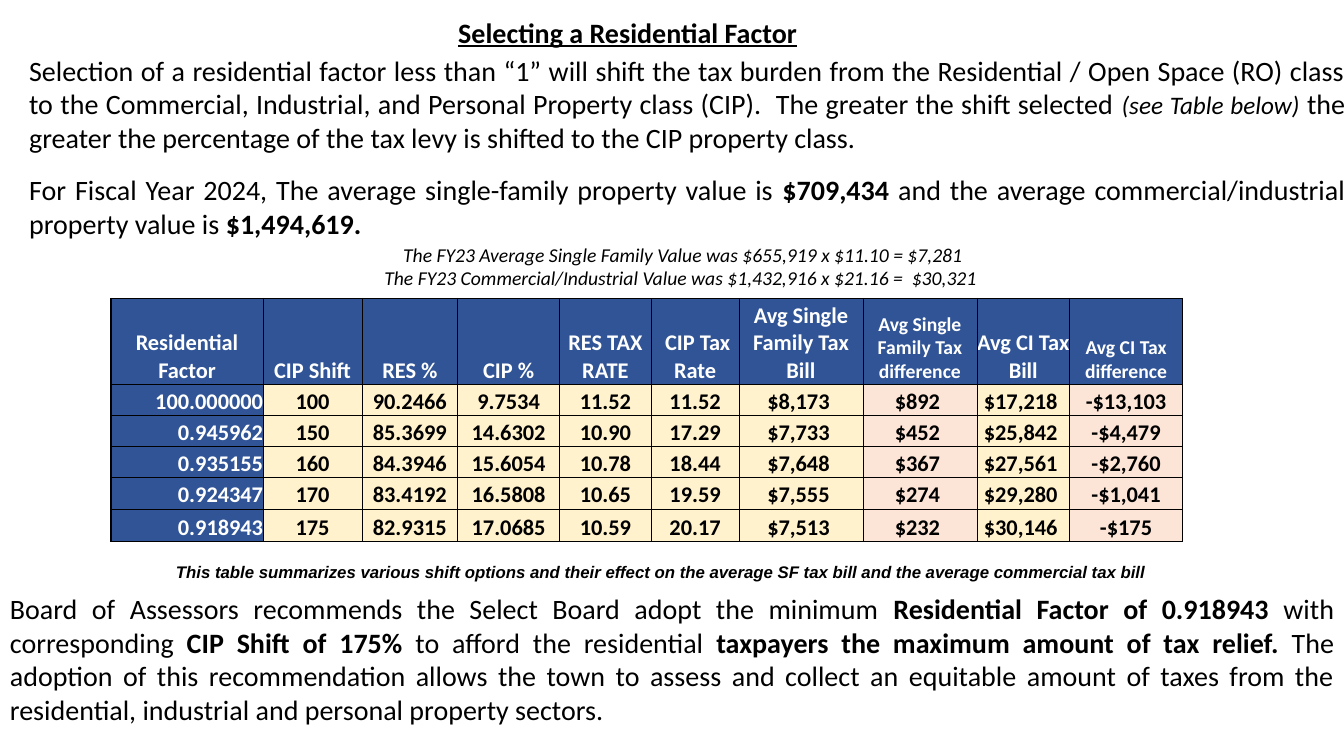
from lxml.etree import SubElement
from pptx import Presentation
from pptx.dml.color import RGBColor
from pptx.enum.text import MSO_ANCHOR, MSO_AUTO_SIZE, PP_ALIGN
from pptx.oxml.ns import qn
from pptx.util import Inches, Pt

BLACK = RGBColor(0x00, 0x00, 0x00)
WHITE = RGBColor(0xFF, 0xFF, 0xFF)
NAVY = RGBColor(0x30, 0x54, 0x96)
CREAM = RGBColor(0xFF, 0xF2, 0xCC)
PEACH = RGBColor(0xFC, 0xE4, 0xD6)

BOLD = {"bold": True}
ITALIC = {"italic": True}

COL_WIDTHS = [1.51, 0.98, 0.95, 1.01, 0.91, 0.87, 1.23, 1.13, 0.92, 1.12]
ROW_HEIGHTS = [0.85, 0.31, 0.31, 0.31, 0.31, 0.32]
DIFFERENCE_COLS = (7, 9)
TAX_ROWS = [
    ["Residential Factor", "CIP Shift", "RES %", "CIP %", "RES TAX RATE", " CIP Tax Rate",
     "Avg Single Family Tax Bill", "Avg Single Family Tax difference",
     "Avg CI Tax Bill", "Avg CI Tax difference"],
    ["100.000000", "100", "90.2466", "9.7534", "11.52", "11.52",
     "$8,173 ", "$892 ", "$17,218 ", "-$13,103"],
    ["0.945962", "150", "85.3699", "14.6302", "10.90", "17.29",
     "$7,733 ", "$452 ", "$25,842 ", "-$4,479"],
    ["0.935155", "160", "84.3946", "15.6054", "10.78", "18.44",
     "$7,648 ", "$367 ", "$27,561 ", "-$2,760"],
    ["0.924347", "170", "83.4192", "16.5808", "10.65", "19.59",
     "$7,555 ", "$274 ", "$29,280 ", "-$1,041"],
    ["0.918943", "175", "82.9315", "17.0685", "10.59", "20.17",
     "$7,513 ", "$232 ", "$30,146 ", "-$175"],
]


def add_run(p, text, color=BLACK, **formats):
    r = p.add_run()
    r.text = text
    r.font.color.rgb = color
    for name, value in formats.items():
        setattr(r.font, name, value)


def add_text(s, box, paragraphs, align, size=20, font="Calibri", wrap=True, gap=0):
    """Each paragraph is a list of (text, formats) runs."""
    tf = s.shapes.add_textbox(*map(Inches, box)).text_frame
    tf.word_wrap = wrap
    tf.auto_size = MSO_AUTO_SIZE.SHAPE_TO_FIT_TEXT
    for i, runs in enumerate(paragraphs):
        p = tf.add_paragraph() if i else tf.paragraphs[0]
        p.alignment = align
        p.space_before = Pt(gap if i else 0)
        for text, formats in runs:
            add_run(p, text, **{"size": Pt(size), "name": font, **formats})
    return tf


def set_borders(cell, widths):
    tc_pr = cell._tc.get_or_add_tcPr()
    for side, width in widths.items():
        line = SubElement(tc_pr, qn(f"a:ln{side}"), w=str(Pt(width)))
        fill = SubElement(line, qn("a:solidFill"))
        SubElement(fill, qn("a:srgbClr"), val=str(BLACK))


def add_recommendation(s, box):
    add_text(s, box, [[
        ("Board of Assessors recommends the Select Board adopt the minimum ", {}),
        ("Residential Factor of 0.918943", BOLD),
        (" with corresponding ", {}),
        ("CIP Shift of 175%", BOLD),
        (" to afford the residential ", {}),
        ("taxpayers the maximum amount of tax relief. ", BOLD),
        ("The adoption of this recommendation allows the town to assess and collect an "
         "equitable amount of taxes from the residential, industrial and personal "
         "property sectors. ", {}),
    ]], PP_ALIGN.JUSTIFY)


def add_caption(s, box):
    add_text(s, box, [[
        ("This table summarizes various shift options and their effect on the average SF "
         "tax bill and the average commercial tax bill", {**BOLD, **ITALIC}),
    ]], PP_ALIGN.CENTER, size=12, font="Arial")


def add_title(s, box):
    add_text(s, box, [[("Selecting a Residential Factor", {**BOLD, "underline": True})]],
             PP_ALIGN.CENTER, wrap=False)


def add_introduction(s, box):
    add_text(s, box, [
        [("Selection of a residential factor less than “1” will shift the tax burden from "
          "the Residential / Open Space (RO) class to the Commercial, Industrial, and "
          "Personal Property class (CIP).  The greater the shift selected ", {}),
         ("(see Table below)", {"size": Pt(18), **ITALIC}),
         (" the greater the percentage of the tax levy is shifted to the CIP property "
          "class. ", {})],
        [("For Fiscal Year 2024, The average single-family property value is ", {}),
         ("$709,434 ", BOLD),
         ("and the average commercial/industrial property value is ", {}),
         ("$1,494,619. ", BOLD)],
    ], PP_ALIGN.JUSTIFY, gap=13.4)


def add_tax_table(s, box):
    frame = s.shapes.add_table(len(TAX_ROWS), len(COL_WIDTHS), *map(Inches, box))
    table = frame.table
    table.first_row = table.horz_banding = False
    for column, width in zip(table.columns, COL_WIDTHS):
        column.width = Inches(width)
    for row, height in zip(table.rows, ROW_HEIGHTS):
        row.height = Inches(height)

    last_row, last_col = len(TAX_ROWS) - 1, len(COL_WIDTHS) - 1
    for i, values in enumerate(TAX_ROWS):
        for j, value in enumerate(values):
            cell = table.cell(i, j)
            for side in ("left", "right", "top", "bottom"):
                setattr(cell, f"margin_{side}", 0)
            cell.vertical_anchor = MSO_ANCHOR.BOTTOM

            # Outer edges are heavier than the inner grid
            outer = {"L": j == 0, "R": j == last_col, "T": i == 0, "B": i == last_row}
            set_borders(cell, {side: 1 if edge else 0.5 for side, edge in outer.items()})

            # Header row and factor column are navy, difference columns peach
            heading = i == 0 or j == 0
            difference = j in DIFFERENCE_COLS
            cell.fill.solid()
            cell.fill.fore_color.rgb = NAVY if heading else PEACH if difference else CREAM
            p = cell.text_frame.paragraphs[0]
            p.alignment = PP_ALIGN.RIGHT if i and j == 0 else PP_ALIGN.CENTER
            add_run(p, value, WHITE if heading else BLACK, name="Calibri", bold=True,
                    size=Pt(14 if i == 0 and difference else 16))


def add_prior_year(s, box):
    tf = add_text(s, box, [
        [("The FY23 Average Single Family Value was $655,919 x $11.10 = $7,281", ITALIC)],
        [("The FY23 Commercial/Industrial Value was $1,432,916 x $21.16 =  $30,321 ", ITALIC)],
    ], PP_ALIGN.CENTER, size=14)
    tf.margin_left = Inches(0.32)


def main():
    prs = Presentation()
    prs.slide_width, prs.slide_height = Inches(13.33), Inches(7.5)
    s = prs.slides.add_slide(prs.slide_layouts[6])
    add_recommendation(s, (0, 5.82, 13.33, 1.45))
    add_caption(s, (0.09, 5.52, 12.94, 0.3))
    add_title(s, (4.43, 0.1, 3.59, 0.44))
    add_introduction(s, (0.19, 0.48, 13.25, 1.97))
    add_tax_table(s, (1.1, 2.96, 10.63, 2.41))
    add_prior_year(s, (0, 2.36, 13.33, 0.57))
    prs.save("out.pptx")


if __name__ == "__main__":
    main()
